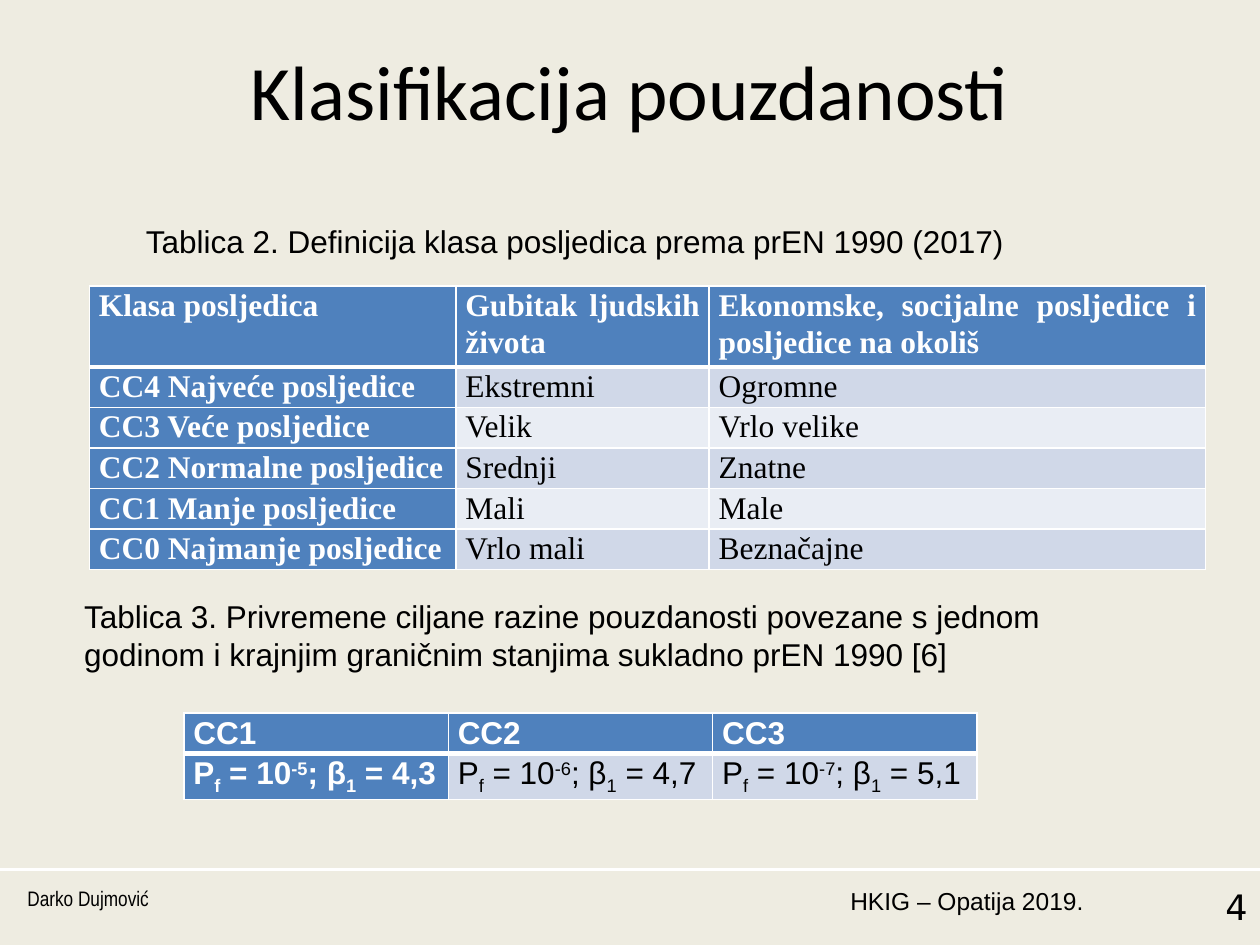
from lxml.etree import SubElement
from pptx import Presentation
from pptx.dml.color import RGBColor
from pptx.enum.shapes import MSO_CONNECTOR
from pptx.enum.text import MSO_ANCHOR, PP_ALIGN
from pptx.oxml.ns import qn
from pptx.util import Pt

CREAM = RGBColor(0xEE, 0xEC, 0xE1)
BLACK = RGBColor(0, 0, 0)
WHITE = RGBColor(0xFF, 0xFF, 0xFF)
BLUE = RGBColor(0x4F, 0x81, 0xBD)
BAND_DARK = RGBColor(0xD0, 0xD8, 0xE8)
BAND_LIGHT = RGBColor(0xE9, 0xED, 0xF4)

CONSEQUENCES = [
    ["Klasa posljedica", "Gubitak ljudskih života",
     "Ekonomske, socijalne posljedice i posljedice na okoliš"],
    ["CC4 Najveće posljedice", "Ekstremni", "Ogromne"],
    ["CC3 Veće posljedice", "Velik", "Vrlo velike"],
    ["CC2 Normalne posljedice", "Srednji", "Znatne"],
    ["CC1 Manje posljedice", "Mali", "Male"],
    ["CC0 Najmanje posljedice", "Vrlo mali", "Beznačajne"],
]
# "_" starts a subscript, "^" a superscript, "|" returns to the baseline
RELIABILITY = [
    ["CC1", "CC2", "CC3"],
    [f"P|_f| = 10|^-{power}|; β|_1| = {beta}"
     for power, beta in [(5, "4,3"), (6, "4,7"), (7, "5,1")]],
]
BASELINES = {"_": "-25000", "^": "30000"}


def add_text(left, top, width, height, lines, size, font, align=PP_ALIGN.LEFT, wrap=True):
    tf = s.shapes.add_textbox(Pt(left), Pt(top), Pt(width), Pt(height)).text_frame
    tf.word_wrap = wrap
    tf.vertical_anchor = MSO_ANCHOR.TOP
    tf.text = lines
    for p in tf.paragraphs:
        p.alignment = align
        for r in p.runs:
            r.font.size = Pt(size)
            r.font.name = font
            r.font.color.rgb = BLACK


def add_grid(left, top, widths, heights, rows, font):
    """Add a banded table with a blue first row and first column."""
    table = s.shapes.add_table(len(rows), len(widths), Pt(left), Pt(top),
                               Pt(sum(widths)), Pt(sum(heights))).table
    for column, width in zip(table.columns, widths):
        column.width = Pt(width)
    for i, row in enumerate(rows):
        table.rows[i].height = Pt(heights[i])
        for j, text in enumerate(row):
            cell = table.cell(i, j)
            cell.margin_left = cell.margin_right = Pt(5.4)
            cell.margin_top = cell.margin_bottom = 0
            header = i == 0 or j == 0
            p = cell.text_frame.paragraphs[0]
            p.alignment = PP_ALIGN.JUSTIFY
            p.line_spacing = 1.07
            for part in text.split("|"):
                r = p.add_run()
                r.text = part.lstrip("_^")
                r.font.size = Pt(18)
                r.font.name = font
                r.font.bold = header
                r.font.color.rgb = WHITE if header else BLACK
                if part[0] in BASELINES:
                    r.font._element.set("baseline", BASELINES[part[0]])
            # Borders must come before the fill in the cell properties
            tcPr = cell._tc.get_or_add_tcPr()
            for side in ("lnL", "lnR", "lnT", "lnB"):
                thick = (i == 0 and side == "lnB") or (i == 1 and side == "lnT")
                ln = SubElement(tcPr, qn(f"a:{side}"), w=str(Pt(3 if thick else 1)))
                fill = SubElement(ln, qn("a:solidFill"))
                SubElement(fill, qn("a:srgbClr"), val=str(WHITE))
            cell.fill.solid()
            band = BAND_DARK if i % 2 else BAND_LIGHT
            cell.fill.fore_color.rgb = BLUE if header else band


prs = Presentation()
prs.slide_width, prs.slide_height = Pt(720), Pt(540)
s = prs.slides.add_slide(prs.slide_layouts[6])
s.background.fill.solid()
s.background.fill.fore_color.rgb = CREAM

# Footer
rule = s.shapes.add_connector(MSO_CONNECTOR.STRAIGHT, 0, Pt(496.8), Pt(720), Pt(496.8))
rule.line.color.rgb = WHITE
rule.line.width = Pt(1.5)
SubElement(rule._element.spPr, qn("a:effectLst"))
add_text(473, 502.5, 153.4, 37.5, "HKIG – Opatija 2019.", 14, "Arial", PP_ALIGN.RIGHT)
add_text(8.6, 502.5, 156, 37.5, "Darko Dujmović", 12, "Arial Narrow")
add_text(632, 502.5, 88, 37.5, "4", 20, "DejaVu Sans", PP_ALIGN.RIGHT)

# Title
add_text(36, 21.6, 648, 90, "Klasifikacija pouzdanosti", 44, "Calibri", PP_ALIGN.CENTER)

# Consequence classes
add_text(76.3, 123.1, 509, 29, "Tablica 2. Definicija klasa posljedica prema prEN 1990 (2017)",
         18, "Arial", wrap=False)
add_grid(51.1, 163.4, [209.5, 144.7, 283.7], [46] + [23.2] * 5,
         CONSEQUENCES, "Times New Roman")

# Target reliability levels
add_text(41, 337.7, 638, 51,
         "Tablica 3. Privremene ciljane razine pouzdanosti povezane s jednom\n"
         "godinom i krajnjim graničnim stanjima sukladno prEN 1990 [6]", 18, "Arial")
add_grid(105.1, 407.5, [151.1] * 3, [22.5, 26], RELIABILITY, "Arial")

prs.save("out.pptx")
